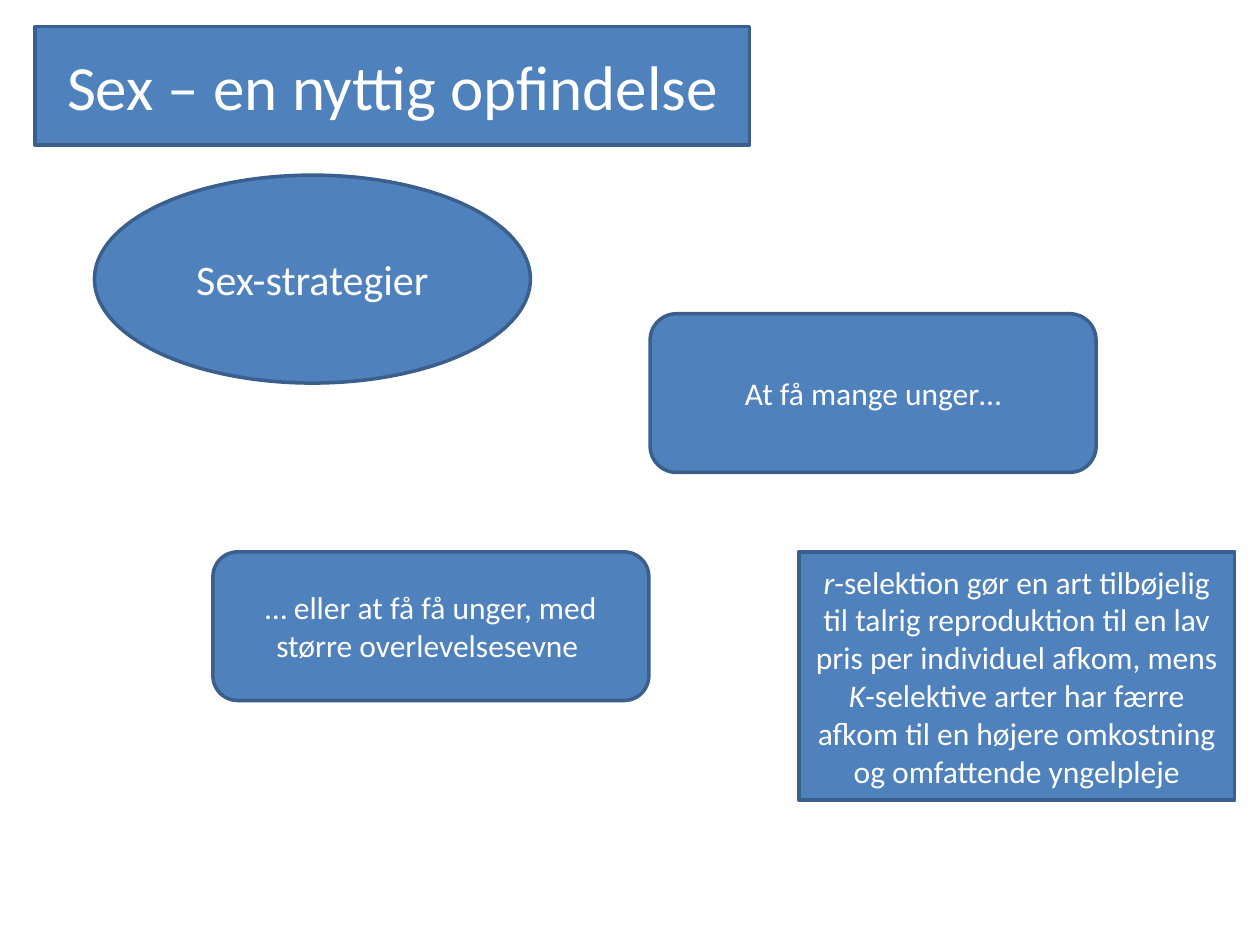
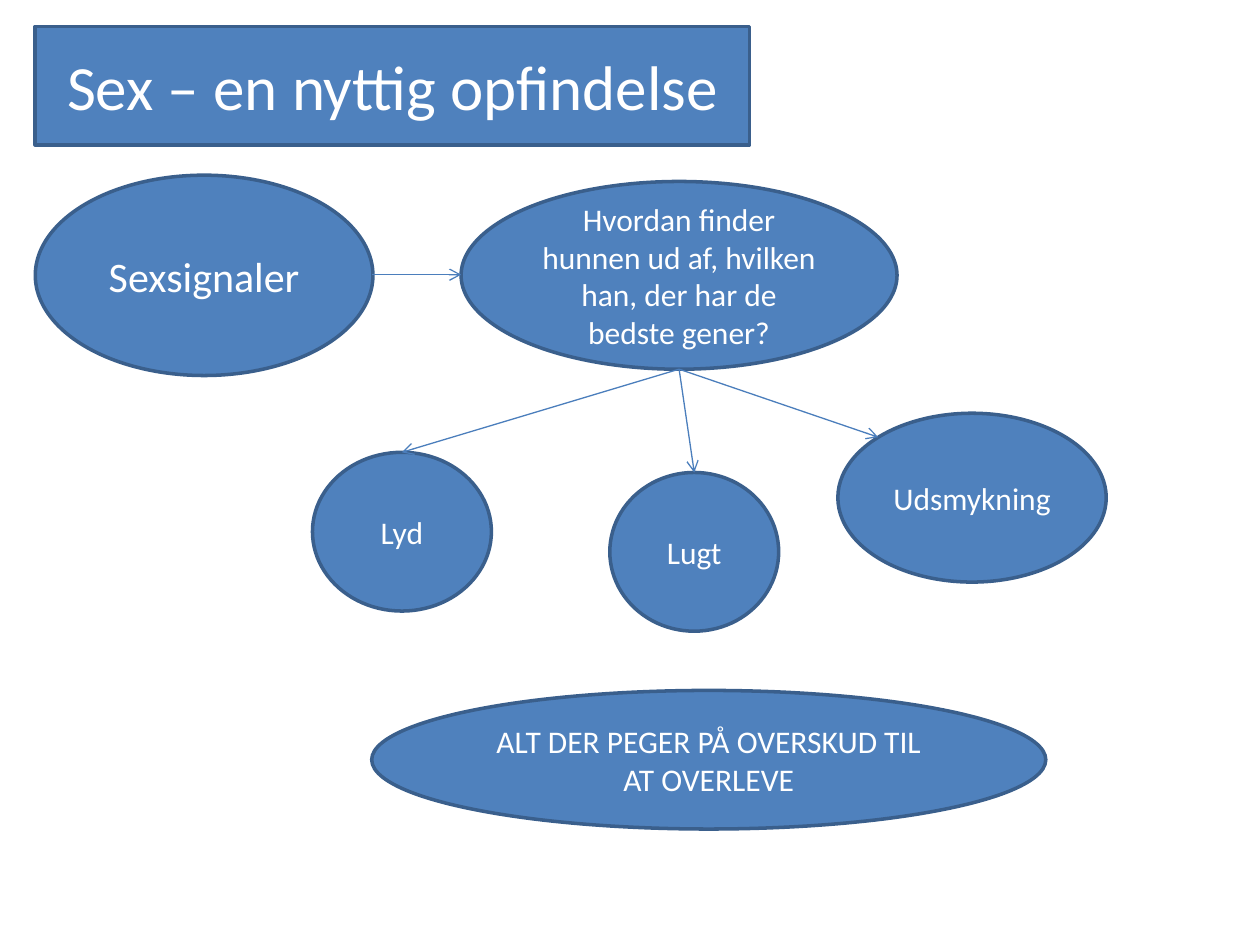
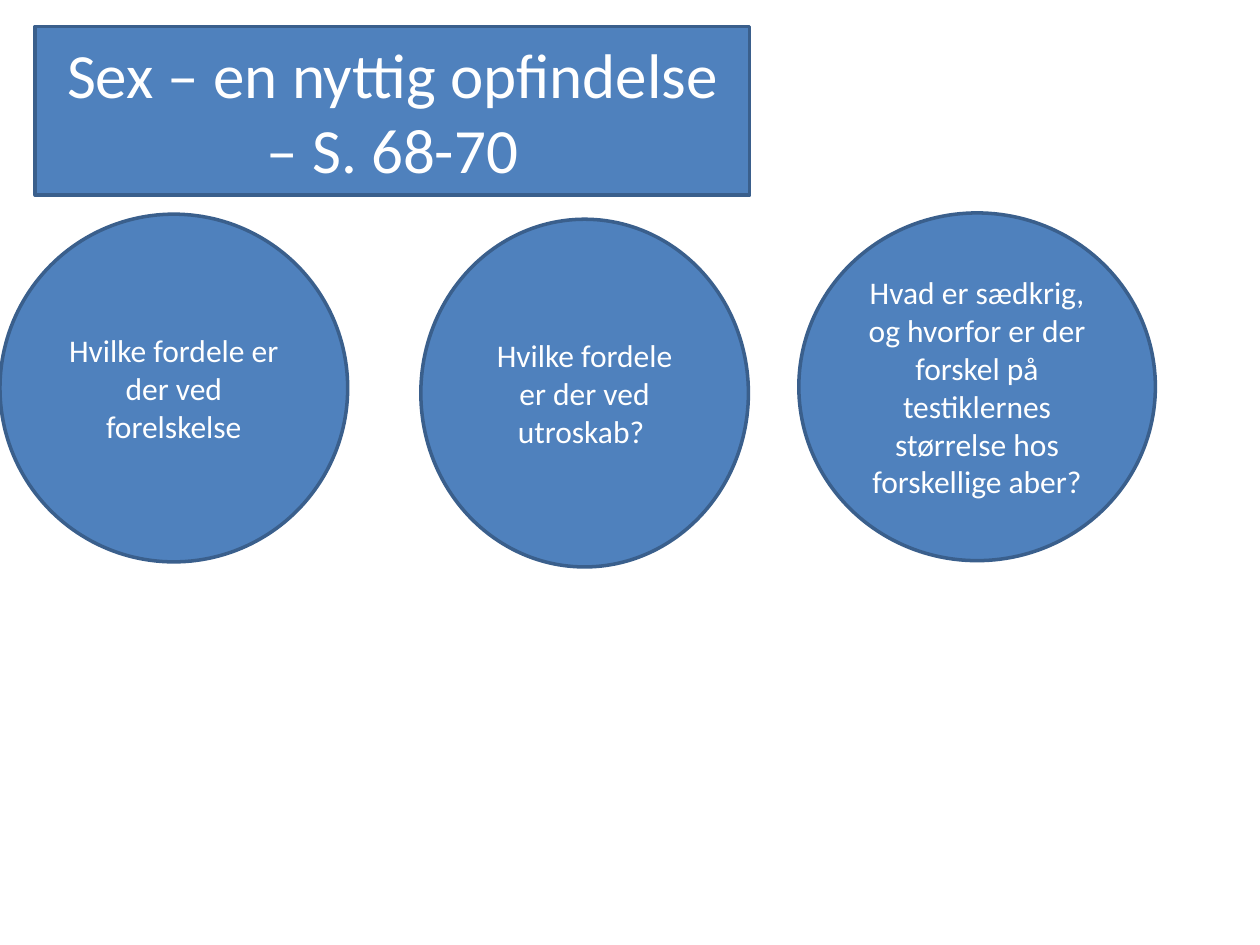
"""Build three slides on the strategies and signals of reproduction."""
from lxml import etree
from pptx import Presentation
from pptx import util as u
from pptx.dml.color import RGBColor
from pptx.enum import shapes, text
from pptx.oxml.ns import qn

HUES = {"fill": "4F81BD", "edge": "3A5F8C", "arrow": "4B7EBC", "text": "FFFFFF"}
FONT = "Calibri"
TITLE = "Sex – en nyttig opfindelse"
KIND = shapes.MSO_SHAPE
RECT, OVAL, ROUND = KIND.RECTANGLE, KIND.OVAL, KIND.ROUNDED_RECTANGLE


def add_box(slide, kind, spot, runs, size=18):
    box = slide.shapes.add_shape(kind, *[u.Inches(n) for n in spot])
    box.shadow.inherit = False
    box.fill.solid()
    box.fill.fore_color.rgb = RGBColor.from_string(HUES["fill"])
    box.line.color.rgb = RGBColor.from_string(HUES["edge"])
    box.line.width = u.Pt(2)
    frame = box.text_frame
    frame.word_wrap = True
    frame.vertical_anchor = text.MSO_ANCHOR.MIDDLE
    para = frame.paragraphs[0]
    para.alignment = text.PP_ALIGN.CENTER
    for words, slant in runs:
        run = para.add_run()
        run.text = words
        run.font.name = FONT
        run.font.size = u.Pt(size)
        run.font.italic = slant
        run.font.color.rgb = RGBColor.from_string(HUES["text"])
    return box


def add_arrow(slide, start, end):
    points = [u.Inches(n) for n in (*start, *end)]
    line = slide.shapes.add_connector(shapes.MSO_CONNECTOR.STRAIGHT, *points)
    line.line.color.rgb = RGBColor.from_string(HUES["arrow"])
    line.line.width = u.Pt(0.75)
    etree.SubElement(line.line._get_or_add_ln(), qn("a:tailEnd"), type="arrow")
    etree.SubElement(line._element.spPr, qn("a:effectLst"))
    return line


deck = Presentation()
deck.slide_width, deck.slide_height = u.Inches(10), u.Inches(7.5)
pages = []
for title, high in [(TITLE, 0.94), (TITLE, 0.94), (TITLE + " – S. 68-70", 1.34)]:
    page = deck.slides.add_slide(deck.slide_layouts[6])
    add_box(page, RECT, (0.28, 0.21, 5.67, high), [(title, False)], 36)
    pages.append(page)
plans, signals, asks = pages

add_box(plans, OVAL, (0.75, 1.39, 3.46, 1.65), [("Sex-strategier", False)], 24)
add_box(plans, ROUND, (5.16, 2.49, 3.54, 1.26), [("At få mange unger…", False)])
add_box(plans, ROUND, (1.69, 4.38, 3.46, 1.18),
        [("… eller at få få unger, med større overlevelsesevne ", False)])
add_box(plans, RECT, (6.34, 4.38, 3.46, 1.97), [
    ("r", True),
    ("-selektion gør en art tilbøjelig til talrig reproduktion til en lav pris "
     "per individuel afkom, mens ", False),
    ("K", True),
    ("-selektive arter har færre afkom til en højere omkostning og omfattende "
     "yngelpleje", False),
])

add_box(signals, OVAL, (0.28, 1.39, 2.68, 1.59), [("Sexsignaler", False)], 24)
add_box(signals, OVAL, (3.66, 1.44, 3.46, 1.49),
        [("Hvordan finder hunnen ud af, hvilken han, der har de bedste gener?", False)])
add_arrow(signals, (2.95, 2.18), (3.66, 2.18))
for word, spot, tip in [
    ("Lyd", (2.48, 3.59, 1.42, 1.26), (3.19, 3.59)),
    ("Lugt", (4.84, 3.75, 1.34, 1.26), (5.51, 3.75)),
    ("Udsmykning", (6.65, 3.28, 2.13, 1.34), (6.97, 3.47)),
]:
    add_box(signals, OVAL, spot, [(word, False)])
    add_arrow(signals, (5.39, 2.93), tip)
add_box(signals, OVAL, (2.95, 5.48, 5.35, 1.1),
        [("ALT DER PEGER PÅ OVERSKUD TIL AT OVERLEVE", False)])

for left, top, wide, words in [
    (0, 1.7, 2.76, "Hvilke fordele er der ved forelskelse"),
    (3.34, 1.74, 2.6, "Hvilke fordele er der ved utroskab? "),
    (6.34, 1.69, 2.83, "Hvad er sædkrig, og hvorfor er der forskel på testiklernes "
                       "størrelse hos forskellige aber?"),
]:
    add_box(asks, OVAL, (left, top, wide, 2.76), [(words, False)])

deck.save("out.pptx")
